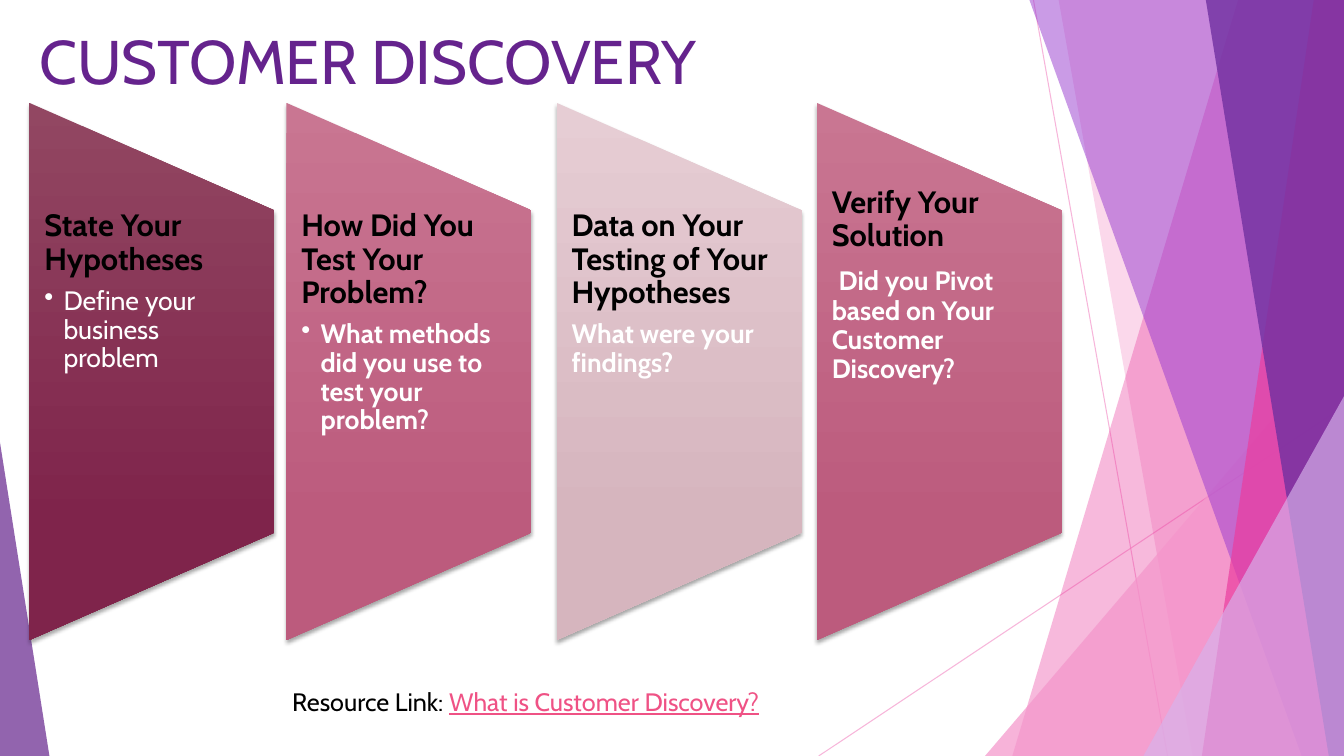
import dataclasses

import lxml.etree
import pptx
import pptx.dml.color
import pptx.enum.shapes
import pptx.enum.text
import pptx.oxml
import pptx.oxml.ns
import pptx.util

Inches = pptx.util.Inches
Pt = pptx.util.Pt
qn = pptx.oxml.ns.qn
SHAPES = pptx.enum.shapes.MSO_SHAPE
NAMESPACE = 'xmlns:a="http://schemas.openxmlformats.org/drawingml/2006/main"'


@dataclasses.dataclass(frozen=True)
class Theme:
    font: str = "Cabin"
    title_size: int = 44
    heading_size: int = 22
    body_size: int = 19
    resource_size: int = 18
    black: str = "000000"
    white: str = "FFFFFF"
    title: str = "65238D"
    link: str = "EF5285"
    pink: str = "EB3D9F"
    light_pink: str = "F496CB"
    violet: str = "9739CF"
    purple: str = "7030A0"
    lilac: str = "D7B3EC"
    wine: tuple = ("924762", "7F244B")
    rose: tuple = ("C97692", "BC5B7D")
    blush: tuple = ("E6CDD4", "D6B5BE")


THEME = Theme()
WIDTH, HEIGHT = 13.33, 7.5
BULLET_INDENT = 0.19

# Right-hand facets, back to front: (top x, bottom x) of the slanted side,
# or (left, top) of a triangle that fills the lower right corner
FACETS = [
    ("band", 12.28, 10.04, THEME.pink, 36),
    ("band", 10.5, 11.83, THEME.pink, 20),
    ("triangle", 9.77, 3.33, THEME.light_pink, 72),
    ("band", 10.21, 12.91, THEME.violet, 50),
    ("band", 13.03, 11.92, THEME.pink, 70),
    ("band", 11.96, 13.18, THEME.purple, 80),
    ("triangle", 11.34, 3.93, THEME.lilac, 66),
]
RAYS = [(10.25, 0, 11.58, HEIGHT), (WIDTH, 4.03, 8.12, HEIGHT)]

# Panels: left, colours, heading, body, body is bulleted, body is bold, text lift
PANELS = [
    (0.29, THEME.wine, "State Your Hypotheses",
     "Define your business problem", True, False, 0),
    (2.84, THEME.rose, "How Did You Test Your Problem?",
     "What methods did you use to test your problem?", True, True, 0),
    (5.52, THEME.blush, "Data on Your Testing of Your Hypotheses",
     "What were your findings?", False, True, 0),
    (8.1, THEME.rose, "Verify Your Solution",
     "Did you Pivot based on Your Customer Discovery?", False, True, 0.23),
]
PANEL_TOP, PANEL_WIDTH, PANEL_HEIGHT = 1.02, 2.43, 5.33


def rgb(value):
    return pptx.dml.color.RGBColor.from_string(value)


def set_alpha(properties, percent):
    color = next(properties.iter(qn("a:srgbClr")))
    lxml.etree.SubElement(color, qn("a:alpha"), val=str(percent * 1000))


def paint(shape, color, alpha):
    shape.shadow.inherit = False
    shape.fill.solid()
    shape.fill.fore_color.rgb = rgb(color)
    shape.line.fill.background()
    set_alpha(shape._element.spPr, alpha)


def add_run(paragraph, text, size, color, bold=False, underline=False):
    run = paragraph.add_run()
    run.text = text
    run.font.name = THEME.font
    run.font.size = Pt(size)
    run.font.color.rgb = rgb(color)
    run.font.bold = bold
    run.font.underline = underline


def add_text_frame(slide, left, top, width, height):
    box = slide.shapes.add_textbox(Inches(left), Inches(top), Inches(width), Inches(height))
    box.text_frame.word_wrap = True
    return box.text_frame


def add_triangle(slide, left, top, width, height, apex, color, alpha):
    triangle = slide.shapes.add_shape(SHAPES.ISOSCELES_TRIANGLE, Inches(left), Inches(top),
                                      Inches(width), Inches(height))
    triangle.adjustments[0] = apex
    paint(triangle, color, alpha)


def add_backdrop(slide, width, height):
    # Thin rays
    for x1, y1, x2, y2 in RAYS:
        ray = slide.shapes.add_connector(pptx.enum.shapes.MSO_CONNECTOR.STRAIGHT,
                                         Inches(x1), Inches(y1), Inches(x2), Inches(y2))
        ray.line.color.rgb = rgb(THEME.light_pink)
        ray.line.width = Pt(0.75)
        properties = ray._element.spPr
        set_alpha(properties, 70)
        lxml.etree.SubElement(properties, qn("a:effectLst"))

    # Overlapping facets on the right
    for kind, first, second, color, alpha in FACETS:
        if kind == "triangle":
            add_triangle(slide, first, second, width - first, height - second, 1, color, alpha)
            continue
        builder = slide.shapes.build_freeform(Inches(first), 0)
        corners = [(width, 0), (width, height), (second, height)]
        builder.add_line_segments([(Inches(x), Inches(y)) for x, y in corners])
        paint(builder.convert_to_shape(), color, alpha)

    # Sliver on the left
    add_triangle(slide, 0, 4.39, 0.49, height - 4.39, 0, THEME.title, 70)


def shade_panel(shape, colors):
    shape.line.fill.background()
    properties = shape._element.spPr
    gradient = pptx.oxml.parse_xml(
        f'<a:gradFill {NAMESPACE} rotWithShape="0"><a:gsLst>'
        f'<a:gs pos="0"><a:srgbClr val="{colors[0]}"/></a:gs>'
        f'<a:gs pos="78000"><a:srgbClr val="{colors[1]}"/></a:gs>'
        '</a:gsLst><a:lin ang="5400000" scaled="0"/></a:gradFill>')
    properties.find(qn("a:ln")).addprevious(gradient)
    properties.append(pptx.oxml.parse_xml(
        f'<a:effectLst {NAMESPACE}><a:outerShdw blurRad="{Pt(3)}" dist="{Pt(2)}" '
        f'dir="5400000" rotWithShape="0"><a:srgbClr val="{THEME.black}">'
        '<a:alpha val="35000"/></a:srgbClr></a:outerShdw></a:effectLst>'))


def add_bullet(paragraph):
    paragraph.level = 1
    properties = paragraph._p.get_or_add_pPr()
    properties.set("marL", str(Inches(BULLET_INDENT)))
    properties.set("indent", str(-Inches(BULLET_INDENT)))
    lxml.etree.SubElement(properties, qn("a:buChar"), char="•")


def add_panel(slide, left, top, width, height, colors, heading, body, bulleted, bold, lift):
    # The trapezoid lies on its side, so its unturned box swaps width and height
    shape = slide.shapes.add_shape(
        SHAPES.FLOWCHART_MANUAL_OPERATION,
        Inches(left + (width - height) / 2), Inches(top + (height - width) / 2),
        Inches(height), Inches(width))
    shape.rotation = 270
    shade_panel(shape, colors)

    # Text keeps to the middle three fifths
    frame = add_text_frame(slide, left, top + height / 5 - lift, width, height * 3 / 5)
    frame.margin_left = frame.margin_right = Inches(0.15)
    frame.margin_top = frame.margin_bottom = 0
    title = frame.paragraphs[0]
    detail = frame.add_paragraph()
    for paragraph in (title, detail):
        paragraph.line_spacing = 0.9
    title.space_after = Pt(0.35 * THEME.heading_size)
    add_run(title, heading, THEME.heading_size, THEME.black, bold=True)
    if bulleted:
        add_bullet(detail)
    if lift:
        add_run(detail, " ", THEME.heading_size, THEME.black, bold=True)
    add_run(detail, body, THEME.body_size, THEME.white, bold=bold)


def add_title(slide, left, top, width, height):
    frame = add_text_frame(slide, left, top, width, height)
    add_run(frame.paragraphs[0], "CUSTOMER DISCOVERY", THEME.title_size, THEME.title)


def add_resource(slide, left, top, width, height):
    paragraph = add_text_frame(slide, left, top, width, height).paragraphs[0]
    add_run(paragraph, "Resource Link: ", THEME.resource_size, THEME.black)
    add_run(paragraph, "What is Customer Discovery?", THEME.resource_size, THEME.link,
            underline=True)


def main():
    presentation = pptx.Presentation()
    presentation.slide_width = Inches(WIDTH)
    presentation.slide_height = Inches(HEIGHT)
    slide = presentation.slides.add_slide(presentation.slide_layouts[6])
    add_backdrop(slide, WIDTH, HEIGHT)
    for left, *content in PANELS:
        add_panel(slide, left, PANEL_TOP, PANEL_WIDTH, PANEL_HEIGHT, *content)
    add_title(slide, 0.29, 0.18, 7.74, 0.84)
    add_resource(slide, 2.8, 6.76, 5.33, 0.4)
    presentation.save("out.pptx")


if __name__ == "__main__":
    main()
